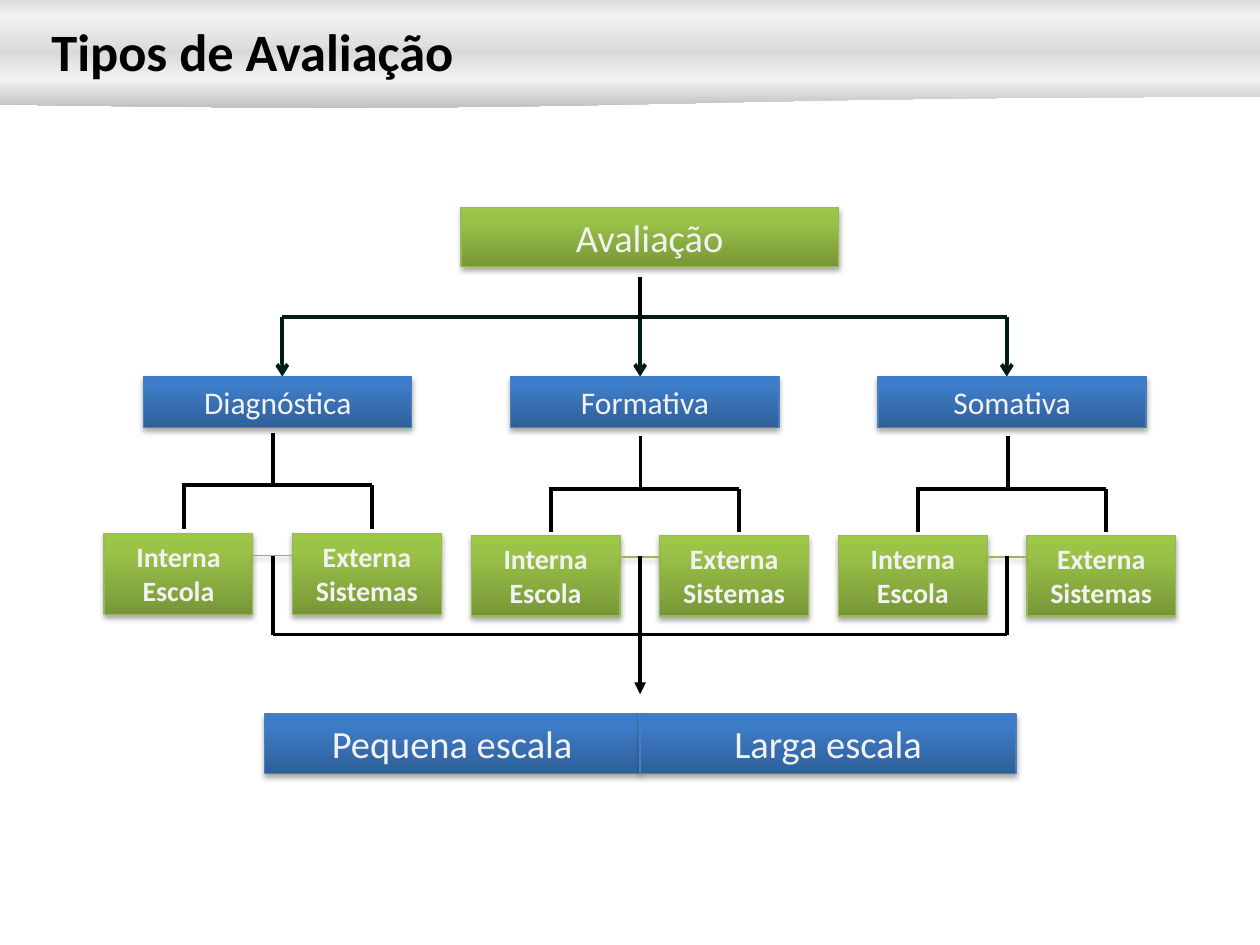
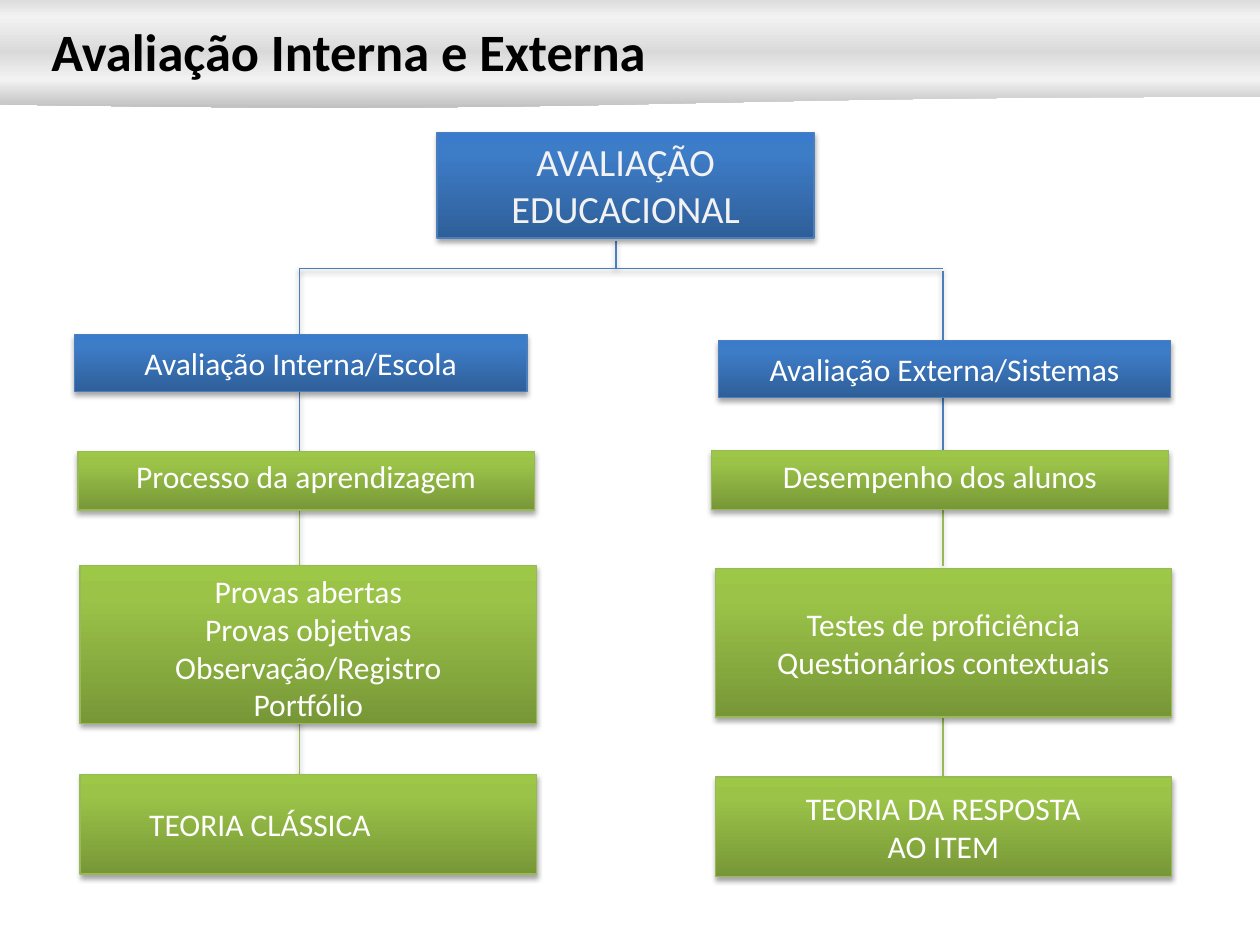
"""Two slides on types of school assessment."""
from pptx import Presentation
from pptx.dml.color import RGBColor
from pptx.enum import shapes, text
from pptx.oxml import parse_xml
from pptx.util import Pt

NS = 'xmlns:a="http://schemas.openxmlformats.org/drawingml/2006/main"'
BLACK = RGBColor(0, 0, 0)
WHITE = RGBColor(0xFF, 0xFF, 0xFF)
PALE = RGBColor(0xF2, 0xF2, 0xF2)
DARK = RGBColor(0x00, 0x1B, 0x1A)
SKY = RGBColor(0x4B, 0x7E, 0xBC)
LEAF = RGBColor(0x98, 0xB9, 0x55)
GRAY = RGBColor(0xD9, 0xD9, 0xD9)

FILLS = {
    SKY: (270, (0, RGBColor(0x2F, 0x5F, 0x99)), (80, RGBColor(0x3D, 0x7C, 0xC7)),
          (100, RGBColor(0x3A, 0x7C, 0xCB))),
    LEAF: (270, (0, RGBColor(0x77, 0x97, 0x37)), (80, RGBColor(0x9B, 0xC3, 0x48)),
           (100, RGBColor(0x9D, 0xC7, 0x46))),
    GRAY: (90, (0, GRAY), (50, PALE), (100, RGBColor(0xBF, 0xBF, 0xBF))),
}
SHADE = (f'<a:effectLst {NS}><a:outerShdw blurRad="39370" dist="22860" dir="5400000" rotWithShape="0">'
         '<a:srgbClr val="000000"><a:alpha val="35000"/></a:srgbClr></a:outerShdw></a:effectLst>')
PLAIN = f"<a:effectLst {NS}/>"

GROW = dict(auto_size=text.MSO_AUTO_SIZE.SHAPE_TO_FIT_TEXT,
            vertical_anchor=text.MSO_ANCHOR.TOP, word_wrap=True)
TOP = dict(vertical_anchor=text.MSO_ANCHOR.TOP, word_wrap=True)
MID = dict(vertical_anchor=text.MSO_ANCHOR.MIDDLE, word_wrap=True)
FLAT = dict(MID, margin_left=0, margin_right=0, margin_top=0, margin_bottom=0)
MIDDLE = text.PP_ALIGN.CENTER
RECT = shapes.MSO_SHAPE.RECTANGLE


def box(page, place, hue, lines=(), size=18, ink=PALE, frame=GROW, bold=False,
        align=MIDDLE, gap=0, form=RECT):
    """Draw a gradient shape with its lines of text."""
    item = page.shapes.add_shape(form, *map(Pt, place))
    angle, *stops = FILLS[hue]
    marks = "".join(f'<a:gs pos="{pos * 1000}"><a:srgbClr val="{tone}"/></a:gs>' for pos, tone in stops)
    props = item.element.spPr
    if hue == GRAY:
        item.line.fill.background()
    else:
        item.line.color.rgb = hue
        item.line.width = Pt(0.75)
    props.insert(2, parse_xml(f'<a:gradFill {NS} rotWithShape="1"><a:gsLst>{marks}</a:gsLst>'
                              f'<a:lin ang="{angle * 60000}" scaled="0"/></a:gradFill>'))
    props.append(parse_xml(PLAIN if hue == GRAY else SHADE))
    body = item.text_frame
    for key, val in frame.items():
        setattr(body, key, val)
    for num, line in enumerate(lines):
        para = body.add_paragraph() if num else body.paragraphs[0]
        para.alignment = align
        para.space_before = Pt(gap)
        run = para.add_run()
        run.text = line
        for key, val in dict(name="Calibri", size=Pt(size), bold=bold).items():
            setattr(run.font, key, val)
        run.font.color.rgb = ink
    return item


def link(page, ends, hue=BLACK, width=2.25, tip=None):
    """Draw a straight line, with a shadow if it is thin."""
    item = page.shapes.add_connector(shapes.MSO_CONNECTOR.STRAIGHT, *map(Pt, ends))
    item.line.color.rgb = hue
    item.line.width = Pt(width)
    if tip:
        item.line._get_or_add_ln().append(parse_xml(f'<a:tailEnd {NS} type="{tip}"/>'))
    item.element.spPr.append(parse_xml(SHADE if width < 1 else PLAIN))


deck = Presentation()
deck.slide_width, deck.slide_height = Pt(720), Pt(540)
pages = []
for title in ("Tipos de Avaliação", "Avaliação Interna e Externa"):
    page = deck.slides.add_slide(deck.slide_layouts[6])
    wave = shapes.MSO_SHAPE.FLOWCHART_DOCUMENT
    upper = box(page, (0, -11.5, 720, 41.8), GRAY, form=wave, frame=MID)
    upper.element.spPr.xfrm.set("flipV", "1")
    box(page, (0, 28.8, 720, 33.1), GRAY, form=wave, frame=MID)
    head = page.shapes.add_textbox(Pt(22.3), Pt(7.2), Pt(360), Pt(43.9)).text_frame
    for key, val in GROW.items():
        setattr(head, key, val)
    run = head.paragraphs[0].add_run()
    run.text = title
    for key, val in dict(name="Calibri", size=Pt(30), bold=True).items():
        setattr(run.font, key, val)
    run.font.color.rgb = BLACK
    pages.append(page)
types, modes = pages

STEP = 209.8
AXIS = 365.8
box(types, (263.5, 118.6, 215.5, 33.9), LEAF, ["Avaliação"], 22)
for num, name in enumerate(("Pequena escala", "Larga escala")):
    box(types, (151 + 214.8 * num, 408, 214.8, 33.9), SKY, [name], 22)

for num, (name, drop, tip) in enumerate((("Diagnóstica", 0, 161.3), ("Formativa", 2, AXIS),
                                         ("Somativa", 2, 575.3))):
    left = STEP * num
    box(types, (82.1 + left, 215.2, 153.2, 29.1), SKY, [name])
    base = 305 + drop / 2
    for shift, pair in ((0, ("Interna", "Escola")), (107.7, ("Externa", "Sistemas"))):
        box(types, (59.5 + left + shift, base, 85, 46), LEAF, pair, 16, bold=True)
    link(types, (144.6 + left, base + 12.3, 167.1 + left, base + 12.3), LEAF, 0.75)

    link(types, (tip, 181.4, tip, 215.2), DARK, tip="arrow")
    bar = 277.4 + drop
    link(types, (103.8 + left, bar, 212.6 + left, bar))
    link(types, (156.2 + left, bar - 30, 156.2 + left, bar))
    for leg in (105, 212.6):
        link(types, (leg + left, bar, leg + left, bar + 24.8))
    link(types, (155.8 + left, 317.5, 155.8 + left, 362.6))

link(types, (161.3, 181.4, 575.3, 181.4), DARK)
link(types, (AXIS, 158.4, AXIS, 182.9))
link(types, (155.8, 362.6, 575.3, 362.6))
link(types, (AXIS, 362.6, AXIS, 396.7), tip="triangle")

for ends in ((352, 137.5, 352, 153.4), (170.9, 153.4, 539, 153.4)):
    link(modes, ends, SKY, 0.75)
for axis, *cuts in ((171.2, 153.4, 192, 224, 257.8, 291, 323.3, 407.5, 442.4),
                    (538.8, 154.8, 194.4, 225.4, 257.8, 291, 323.3, 409.7, 444.2)):
    for num in range(0, 8, 2):
        link(modes, (axis, cuts[num], axis, cuts[num + 1]), SKY if num < 4 else LEAF, 0.75)

box(modes, (249.8, 75.6, 215.5, 60.5), SKY, ["AVALIAÇÃO EDUCACIONAL"], 22)
for place, hue, lines, frame, gap in (
    ((42.5, 191.3, 258.6, 32.6), SKY, ["Avaliação Interna/Escola"], FLAT, 3.6),
    ((410.4, 194.5, 258.6, 32.6), SKY, ["Avaliação Externa/Sistemas"], FLAT, 3.6),
    ((44.6, 257.8, 260.8, 33.7), LEAF, ["Processo da aprendizagem"], TOP, 3.6),
    ((406.8, 257.5, 260.8, 33.7), LEAF, ["Desempenho dos alunos"], TOP, 3.6),
    ((45.8, 323.3, 260.8, 90), LEAF,
     ["Provas abertas", "Provas objetivas", "Observação/Registro", "Portfólio"], TOP, 0),
    ((408.7, 325, 260.8, 84.8), LEAF,
     ["Testes de proficiência", "Questionários contextuais"], MID, 0),
    ((408.7, 444, 260.8, 57), LEAF, ["TEORIA DA RESPOSTA", "AO ITEM"], MID, 0),
):
    box(modes, place, hue, lines, ink=WHITE, frame=frame, gap=gap)
box(modes, (45.8, 442.5, 260.8, 57), LEAF, ["TEORIA CLÁSSICA"], ink=WHITE,
    frame=dict(MID, margin_left=Pt(39.5)), align=text.PP_ALIGN.LEFT)

deck.save("out.pptx")
